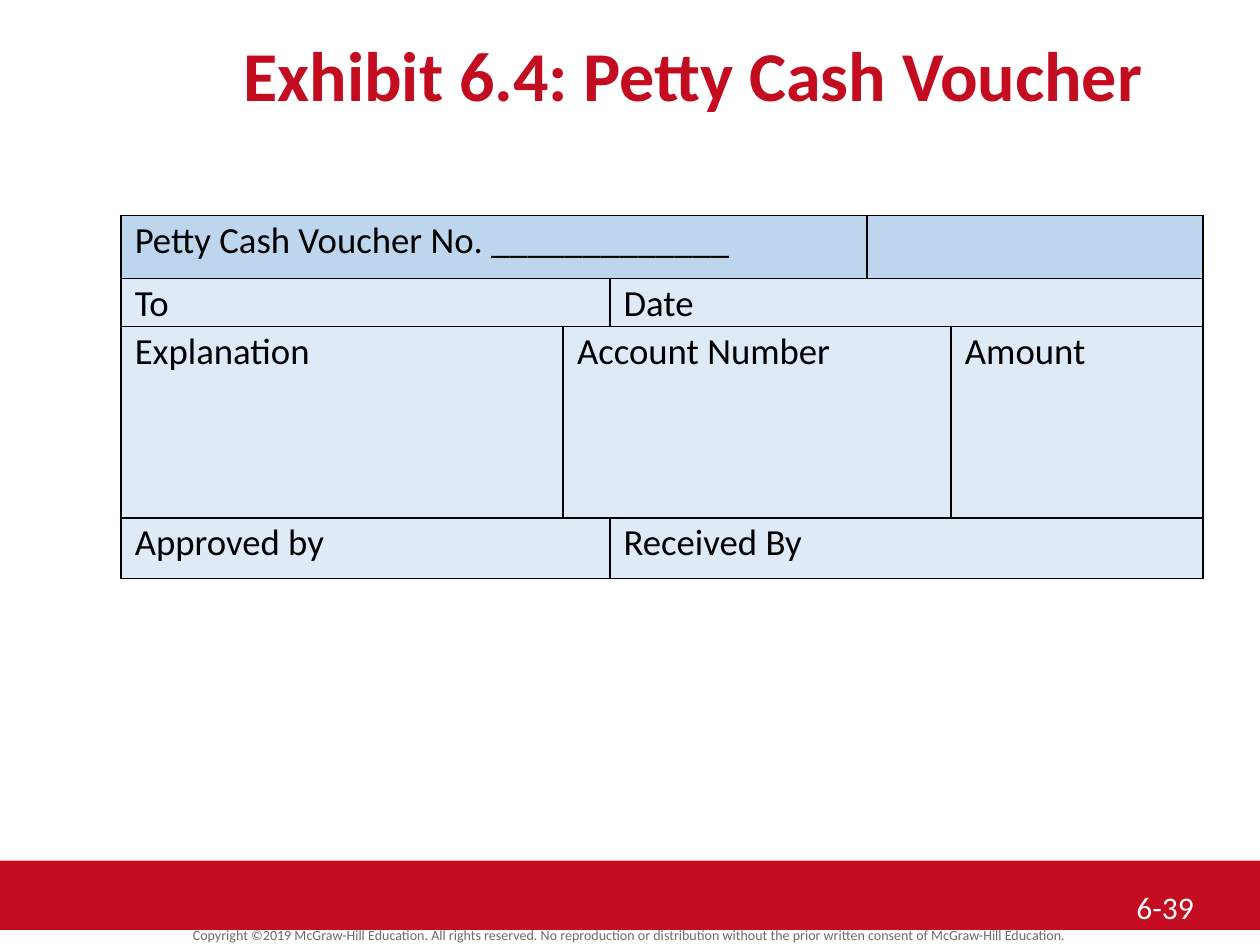
from lxml import etree
from pptx import Presentation
from pptx import util as u
from pptx.dml import color
from pptx.enum import shapes, text
from pptx.oxml import ns

RED = "C30C20"
HEADER_BLUE = "BDD6EE"
PALE_BLUE = "DEEAF6"


def rgb(value):
    return color.RGBColor.from_string(value)


def format_text(text_frame, size, hex_color, bold=False):
    for paragraph in text_frame.paragraphs:
        for run in paragraph.runs:
            run.font.name = "Calibri"
            run.font.size = u.Pt(size)
            run.font.bold = bold
            run.font.color.rgb = rgb(hex_color)


presentation = Presentation()
presentation.slide_width = u.Inches(10)
presentation.slide_height = u.Inches(7.5)
slide = presentation.slides.add_slide(presentation.slide_layouts[5])

footer_band = slide.shapes.add_shape(
    shapes.MSO_SHAPE.RECTANGLE, u.Inches(0), u.Inches(6.83), u.Inches(10), u.Inches(0.55))
footer_band.shadow.inherit = False
footer_band.fill.solid()
footer_band.fill.fore_color.rgb = rgb(RED)
footer_band.line.fill.background()

copyright_box = slide.shapes.add_textbox(
    u.Inches(0), u.Inches(7.34), u.Inches(10), u.Inches(0.19))
copyright_frame = copyright_box.text_frame
copyright_frame.word_wrap = True
copyright_frame.vertical_anchor = text.MSO_ANCHOR.MIDDLE
copyright_frame.margin_top = copyright_frame.margin_bottom = 0
copyright_frame.text = (
    "Copyright ©2019 McGraw-Hill Education. All rights reserved. No reproduction or "
    "distribution without the prior written consent of McGraw-Hill Education.")
copyright_frame.paragraphs[0].alignment = text.PP_ALIGN.CENTER
copyright_frame.paragraphs[0].line_spacing = 0.8
format_text(copyright_frame, 8, "6A6A6A")

title = slide.shapes.title
title.left, title.top = u.Inches(1), u.Inches(0.25)
title.width, title.height = u.Inches(9), u.Inches(0.67)
title.text_frame.text = "Exhibit 6.4: Petty Cash Voucher"
title.text_frame.vertical_anchor = text.MSO_ANCHOR.MIDDLE
title.text_frame.paragraphs[0].alignment = text.PP_ALIGN.CENTER
format_text(title.text_frame, 40, RED, bold=True)

page_number = slide.shapes.add_textbox(
    u.Inches(8.92), u.Inches(7), u.Inches(0.92), u.Inches(0.42))
page_number.text_frame.word_wrap = True
page_number.text_frame.text = "6-39"
format_text(page_number.text_frame, 18, "FFFFFF")

column_widths = [3.51, 0.37, 2.04, 0.67, 2]
row_heights = [0.5, 0.38, 1.52, 0.48]
voucher_rows = [
    [("Petty Cash Voucher No. _____________", 3), ("", 2)],
    [("To", 2), ("Date", 3)],
    [("Explanation", 1), ("Account Number", 3), ("Amount", 1)],
    [("Approved by", 2), ("Received By", 3)],
]

voucher = slide.shapes.add_table(
    len(row_heights), len(column_widths), u.Inches(0.96), u.Inches(1.71),
    u.Inches(sum(column_widths)), u.Inches(sum(row_heights))).table
for column, width in zip(voucher.columns, column_widths):
    column.width = u.Inches(width)
for row, height in zip(voucher.rows, row_heights):
    row.height = u.Inches(height)

for row_index, entries in enumerate(voucher_rows):
    start = 0
    for label, span in entries:
        cell = voucher.cell(row_index, start)
        if span > 1:
            cell.merge(voucher.cell(row_index, start + span - 1))
        cell.text_frame.text = label
        paragraph = cell.text_frame.paragraphs[0]
        paragraph.line_spacing = 1.07
        paragraph.space_after = u.Pt(8)
        format_text(cell.text_frame, 21, "000000")
        start += span

    for cell in voucher.rows[row_index].cells:
        cell.margin_left = cell.margin_right = u.Inches(0.11)
        cell.margin_top = cell.margin_bottom = 0
        cell.fill.solid()
        cell.fill.fore_color.rgb = rgb(HEADER_BLUE if row_index == 0 else PALE_BLUE)
        properties = cell._tc.get_or_add_tcPr()
        for position, side in enumerate(["a:lnL", "a:lnR", "a:lnT", "a:lnB"]):
            border = etree.Element(ns.qn(side), w=str(u.Pt(1)))
            border_fill = etree.SubElement(border, ns.qn("a:solidFill"))
            etree.SubElement(border_fill, ns.qn("a:srgbClr"), val="000000")
            properties.insert(position, border)

presentation.save("out.pptx")
